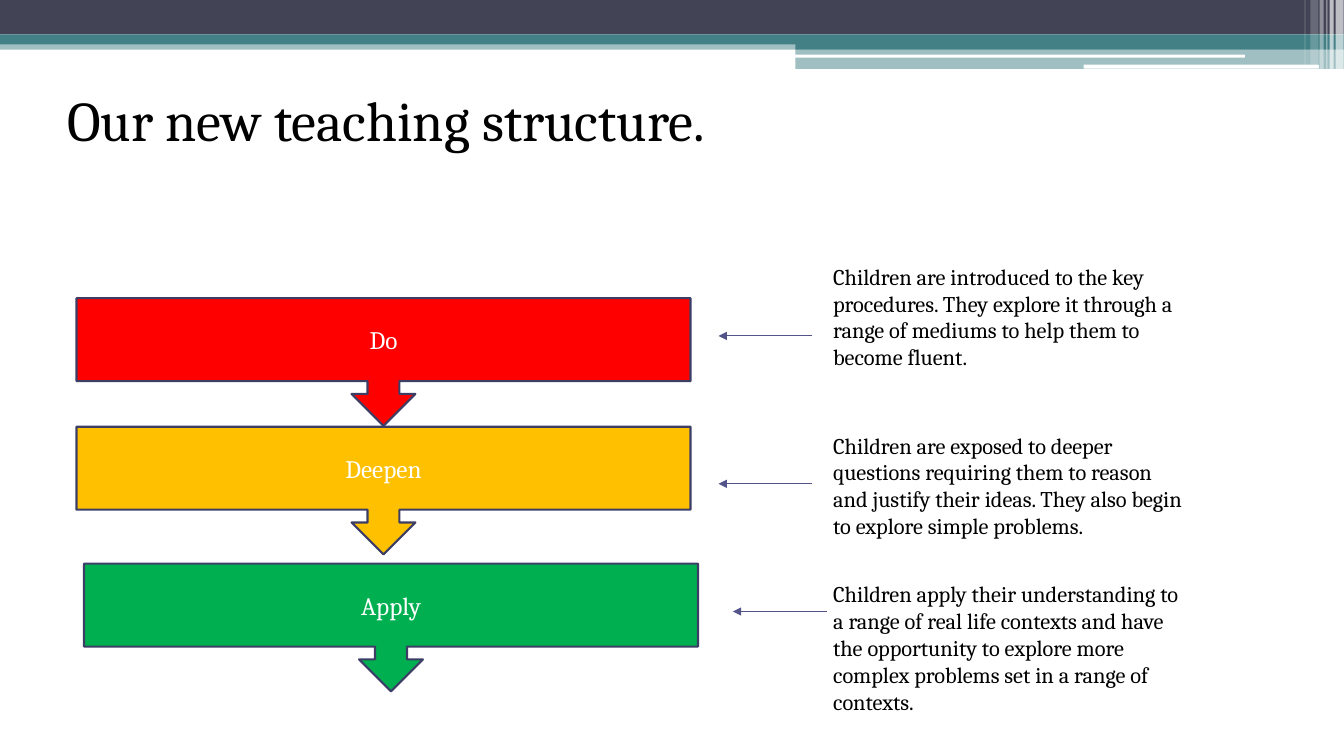
from lxml import etree
from pptx import Presentation
from pptx.dml.color import RGBColor
from pptx.enum.shapes import MSO_CONNECTOR, MSO_SHAPE
from pptx.enum.text import MSO_ANCHOR, MSO_AUTO_SIZE, PP_ALIGN
from pptx.oxml.ns import qn
from pptx.util import Inches, Pt

RECT = MSO_SHAPE.RECTANGLE
ROUND = MSO_SHAPE.ROUNDED_RECTANGLE
CALL = MSO_SHAPE.DOWN_ARROW_CALLOUT
LINE = MSO_CONNECTOR.STRAIGHT
TOP, MID = MSO_ANCHOR.TOP, MSO_ANCHOR.MIDDLE
LEFT, MIDST = PP_ALIGN.LEFT, PP_ALIGN.CENTER
NO_FIT = MSO_AUTO_SIZE.NONE

WHITE = RGBColor(0xFF, 0xFF, 0xFF)
BLACK = RGBColor(0, 0, 0)
NAVY = RGBColor(0x42, 0x44, 0x56)
TEAL = RGBColor(0x43, 0x80, 0x86)
EDGE = RGBColor(0x3D, 0x3E, 0x66)
VIOLET = RGBColor(0x53, 0x54, 0x8A)
RED = RGBColor(0xFF, 0, 0)
AMBER = RGBColor(0xFF, 0xC0, 0)
GREEN = RGBColor(0, 0xB0, 0x50)

FONT = "Cambria"
WIDE, HIGH = Inches(13.33), Inches(7.5)
COLS, ROWS = 160, 90

BANDS = [
    (RECT, 0, 4.8, 160, 1.1, TEAL, 50),
    (RECT, 0, 0, 160, 4.1, NAVY, 100),
    (RECT, 0, 4.1, 160, 1.2, TEAL, 100),
    (RECT, 94.7, 4.7, 65.3, 1.2, TEAL, 100),
    (RECT, 94.7, 5.8, 65.3, 2.4, TEAL, 50),
    (ROUND, 94.6, 6.5, 53.6, 0.36, WHITE, 100),
    (ROUND, 129, 7.7, 28, 0.48, WHITE, 100),
]
STRIPES = [
    (159, 0.96, 8.2, 65),
    (158.3, 0.48, 8.2, 65),
    (157.9, 0.12, 8.2, 60),
    (157.1, 0.48, 8.2, 40),
    (156, 0.96, 7.7, 20),
    (155.3, 0.12, 7.7, 30),
]
STEPS = [
    ("Do", RED, 9.1, 35.5, 96.7, 40, 30.7, 14.2,
     "Children are introduced to the key procedures. They explore it "
     "through a range of mediums to help them to become fluent."),
    ("Deepen", AMBER, 9.1, 50.8, 96.7, 57.6, 50.8, 14.2,
     "Children are exposed to deeper questions requiring them to reason "
     "and justify their ideas. They also begin to explore simple problems."),
    ("Apply", GREEN, 10, 67.1, 98.4, 72.8, 68.5, 17.4,
     "Children apply their understanding to a range of real life contexts "
     "and have the opportunity to explore more complex problems set in a "
     "range of contexts."),
]


def grid(x, y):
    return int(WIDE * x / COLS), int(HIGH * y / ROWS)


def write(shape, text, size=16, color=BLACK, align=LEFT, anchor=TOP):
    frame = shape.text_frame
    frame.word_wrap = True
    frame.auto_size = NO_FIT
    frame.vertical_anchor = anchor
    para = frame.paragraphs[0]
    para.text = text
    para.alignment = align
    para.font.name = FONT
    para.font.size = Pt(size)
    para.font.color.rgb = color


def block(slide, kind, x, y, w, h, color, alpha=100):
    shape = slide.shapes.add_shape(kind, *grid(x, y), *grid(w, h))
    shape.shadow.inherit = False
    shape.fill.solid()
    shape.fill.fore_color.rgb = color
    shape.line.fill.background()
    if alpha < 100:
        tint = shape.fill._xPr.find(qn("a:solidFill"))[0]
        etree.SubElement(tint, qn("a:alpha"), val=str(alpha * 1000))
    return shape


def step(slide, text, color, x, y):
    shape = block(slide, CALL, x, y, 73.1, 15.2, color)
    shape.line.color.rgb = EDGE
    shape.line.width = Pt(1.5)
    write(shape, text, size=18, color=WHITE, align=MIDST, anchor=MID)


def arrow(slide, x, y):
    line = slide.shapes.add_connector(LINE, *grid(x, y), *grid(x - 11.16, y))
    line.line.color.rgb = VIOLET
    line.line.width = Pt(0.75)
    etree.SubElement(line.line._get_or_add_ln(), qn("a:tailEnd"), type="triangle")
    etree.SubElement(line._element.spPr, qn("a:effectLst"))


def note(slide, text, y, h):
    box = slide.shapes.add_textbox(*grid(98, y), *grid(45, h))
    write(box, text)


def title(slide, text):
    head = slide.shapes.title
    head.left, head.top = grid(6.8, 9.6)
    head.width, head.height = grid(131.6, 9.2)
    write(head, text, size=40)


def main():
    deck = Presentation()
    deck.slide_width, deck.slide_height = WIDE, HIGH
    slide = deck.slides.add_slide(deck.slide_layouts[5])
    for band in BANDS:
        block(slide, *band)
    for x, w, h, alpha in STRIPES:
        block(slide, RECT, x, 0, w, h, WHITE, alpha)
    title(slide, "Our new teaching structure.")
    for name, color, x, y, tip, mid, top, high, text in STEPS:
        step(slide, name, color, x, y)
        arrow(slide, tip, mid)
        note(slide, text, top, high)
    deck.save("out.pptx")


if __name__ == "__main__":
    main()
